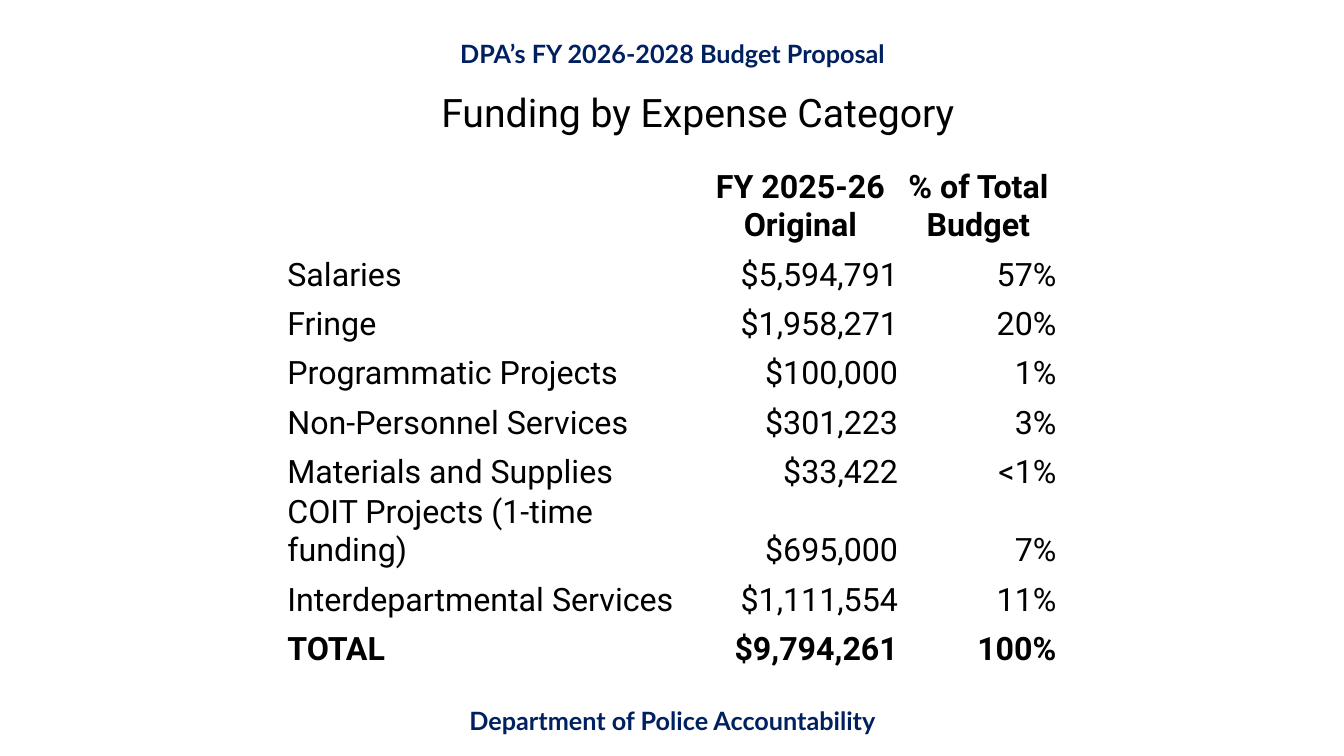
import pptx
import pptx.dml.color
import pptx.enum.text
import pptx.oxml.ns
import pptx.util
from lxml import etree
from pptx.util import Inches

HUES = {"navy": "002060", "black": "000000", "white": "FFFFFF"}
ALIGN = pptx.enum.text.PP_ALIGN
ANCHOR = pptx.enum.text.MSO_ANCHOR
qn = pptx.oxml.ns.qn


def style(par, face, size, hue, bold, align):
    par.alignment = align
    for run in par.runs:
        run.font.name = face
        run.font.size = pptx.util.Pt(size)
        run.font.bold = bold
        run.font.color.rgb = pptx.dml.color.RGBColor.from_string(HUES[hue])


def edge(cell):
    props = cell._tc.get_or_add_tcPr()
    for side in ("lnL", "lnR", "lnT", "lnB"):
        line = etree.SubElement(props, qn(f"a:{side}"), w="12700")
        fill = etree.SubElement(line, qn("a:solidFill"))
        etree.SubElement(fill, qn("a:srgbClr"), val=HUES["white"])


deck = pptx.Presentation()
deck.slide_width, deck.slide_height = Inches(13.33), Inches(7.5)
slide = deck.slides.add_slide(deck.slide_layouts[5])

# Title
title = slide.shapes.title
title.left, title.top = Inches(3.17), Inches(0.51)
title.width, title.height = Inches(7.5), Inches(0.89)
frame = title.text_frame
frame.text = "Funding by Expense Category"
frame.word_wrap = True
frame.auto_size = pptx.enum.text.MSO_AUTO_SIZE.NONE
frame.vertical_anchor = ANCHOR.BOTTOM
frame.paragraphs[0].line_spacing = 0.9
style(frame.paragraphs[0], "Roboto", 28, "black", False, ALIGN.CENTER)

# Lines at the head and foot of the slide
bands = [
    (0.33, "DPA’s FY 2026-2028 Budget Proposal"),
    (6.95, "Department of Police Accountability"),
]
for top, text in bands:
    box = slide.shapes.add_textbox(Inches(1.67), Inches(top), Inches(10), Inches(0.4))
    box.text_frame.word_wrap = True
    box.text_frame.text = text
    style(box.text_frame.paragraphs[0], "Lato", 18, "navy", True, ALIGN.CENTER)

# Budget table
rows = [
    ("", "FY 2025-26 Original", "% of Total Budget"),
    ("Salaries", "$5,594,791", "57%"),
    ("Fringe", "$1,958,271", "20%"),
    ("Programmatic Projects", "$100,000", "1%"),
    ("Non-Personnel Services", "$301,223", "3%"),
    ("Materials and Supplies", "$33,422", "<1%"),
    ("COIT Projects (1-time funding)", "$695,000", "7%"),
    ("Interdepartmental Services", "$1,111,554", "11%"),
    ("TOTAL", "$9,794,261", "100%"),
]
widths = [4.12, 1.96, 1.57]
last = len(rows) - 1
table = slide.shapes.add_table(
    len(rows), len(widths), Inches(2.84), Inches(1.65), Inches(sum(widths)), Inches(4.66)
).table
table.first_row = table.horz_banding = False
for col, width in zip(table.columns, widths):
    col.width = Inches(width)

for r, row in enumerate(rows):
    table.rows[r].height = Inches(0.49 if r else 0.74)
    for c, text in enumerate(row):
        cell = table.cell(r, c)
        edge(cell)
        cell.fill.background()
        cell.margin_left = cell.margin_right = cell.margin_top = Inches(0.01)
        cell.margin_bottom = 0
        cell.vertical_anchor = ANCHOR.BOTTOM
        cell.text_frame.text = text
        if r == 0:
            align = ALIGN.CENTER
        else:
            align = ALIGN.RIGHT if c else ALIGN.LEFT
        style(cell.text_frame.paragraphs[0], "Roboto", 23, "black", r in (0, last), align)

deck.save("out.pptx")
